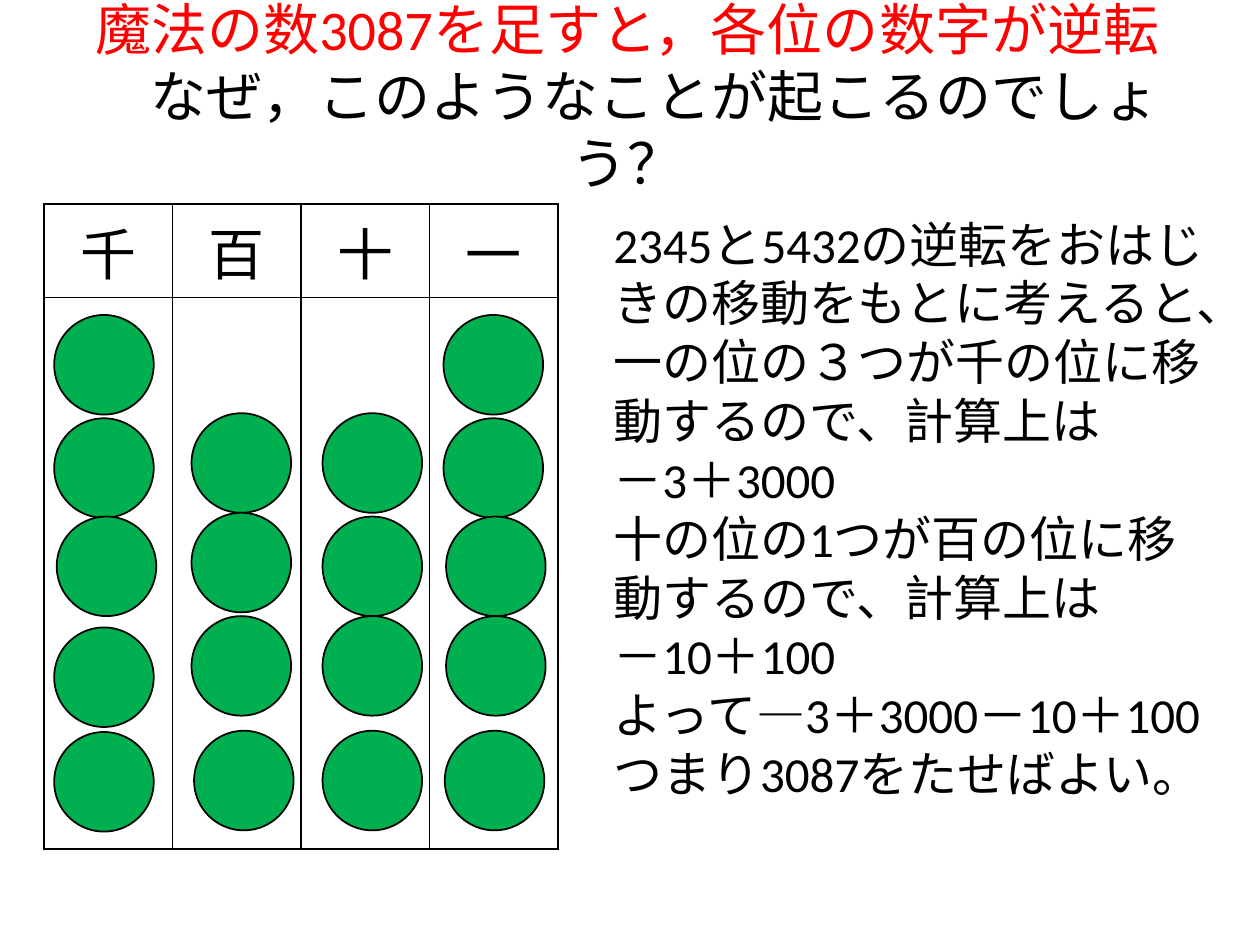
import pptx
import pptx.util
import pptx.dml.color
import pptx.enum.shapes
import pptx.enum.text
import pptx.oxml
import pptx.oxml.ns
import lxml.etree

Inches = pptx.util.Inches
RGBColor = pptx.dml.color.RGBColor
ALIGN = pptx.enum.text.PP_ALIGN
BLACK = RGBColor(0x00, 0x00, 0x00)
RED = RGBColor(0xFF, 0x00, 0x00)
GREEN = RGBColor(0x00, 0xB0, 0x50)
DIAMETER = 0.79


def add_run(paragraph, text, size, color=BLACK):
    run = paragraph.add_run()
    run.text = text
    run.font.name = "Calibri"
    run.font.size = pptx.util.Pt(size)
    run.font.color.rgb = color


def add_borders(cell):
    properties = cell._tc.get_or_add_tcPr()
    for position, side in enumerate(("lnL", "lnR", "lnT", "lnB")):
        line = lxml.etree.Element(pptx.oxml.ns.qn(f"a:{side}"), w="12700")
        fill = lxml.etree.SubElement(line, pptx.oxml.ns.qn("a:solidFill"))
        lxml.etree.SubElement(fill, pptx.oxml.ns.qn("a:srgbClr"), val=str(BLACK))
        properties.insert(position, line)


presentation = pptx.Presentation()
presentation.slide_width = Inches(10)
presentation.slide_height = Inches(7.5)
slide = presentation.slides.add_slide(presentation.slide_layouts[6])

title = slide.shapes.add_textbox(Inches(0.48), Inches(0.13), Inches(9), Inches(1.25))
title.text_frame.word_wrap = True
title.text_frame.vertical_anchor = pptx.enum.text.MSO_ANCHOR.MIDDLE
paragraph = title.text_frame.paragraphs[0]
paragraph.alignment = ALIGN.CENTER
add_run(paragraph, "魔法の数3087を足すと，各位の数字が逆転", 32, RED)
paragraph.add_line_break()
add_run(paragraph, "　なぜ，このようなことが起こるのでしょう？", 32)

places = ["千", "百", "十", "一"]
table = slide.shapes.add_table(
    2, len(places), Inches(0.35), Inches(1.62), Inches(4.09), Inches(5.12)
).table
table.first_row = False
table.horz_banding = False
table.rows[0].height = Inches(0.74)
table.rows[1].height = Inches(4.38)
for column, place in zip(table.columns, places):
    column.width = Inches(1.02)
for cell in table.iter_cells():
    cell.fill.background()
    add_borders(cell)
for cell, place in zip(table.rows[0].cells, places):
    paragraph = cell.text_frame.paragraphs[0]
    paragraph.alignment = ALIGN.CENTER
    add_run(paragraph, place, 32)

counter_columns = [
    [(0.43, 2.5), (0.43, 3.32), (0.45, 4.1), (0.43, 4.98), (0.43, 5.81)],
    [(1.52, 3.28), (1.52, 4.07), (1.52, 4.89), (1.54, 5.8)],
    [(2.56, 3.28), (2.56, 4.1), (2.56, 4.89), (2.56, 5.8)],
    [(3.52, 2.5), (3.52, 3.32), (3.54, 4.1), (3.54, 4.89), (3.53, 5.8)],
]
for counters in counter_columns:
    for left, top in counters:
        counter = slide.shapes.add_shape(
            pptx.enum.shapes.MSO_SHAPE.FLOWCHART_CONNECTOR,
            Inches(left), Inches(top), Inches(DIAMETER), Inches(DIAMETER),
        )
        counter.shadow.inherit = False
        counter.fill.solid()
        counter.fill.fore_color.rgb = GREEN
        counter.line.color.rgb = BLACK
        counter.line.width = pptx.util.Pt(1)

explanation = slide.shapes.add_textbox(
    Inches(4.77), Inches(1.65), Inches(5.04), Inches(4.81)
)
text_frame = explanation.text_frame
text_frame.word_wrap = True
text_frame.auto_size = pptx.enum.text.MSO_AUTO_SIZE.SHAPE_TO_FIT_TEXT
sentences = [
    "2345と5432の逆転をおはじきの移動をもとに考えると、",
    "一の位の３つが千の位に移動するので、計算上は",
    "－3＋3000",
    "十の位の1つが百の位に移動するので、計算上は",
    "－10＋100",
    "よって―3＋3000－10＋100",
    "つまり3087をたせばよい。",
]
for index, sentence in enumerate(sentences):
    paragraph = text_frame.add_paragraph() if index else text_frame.paragraphs[0]
    add_run(paragraph, sentence, 28)

presentation.save("out.pptx")
